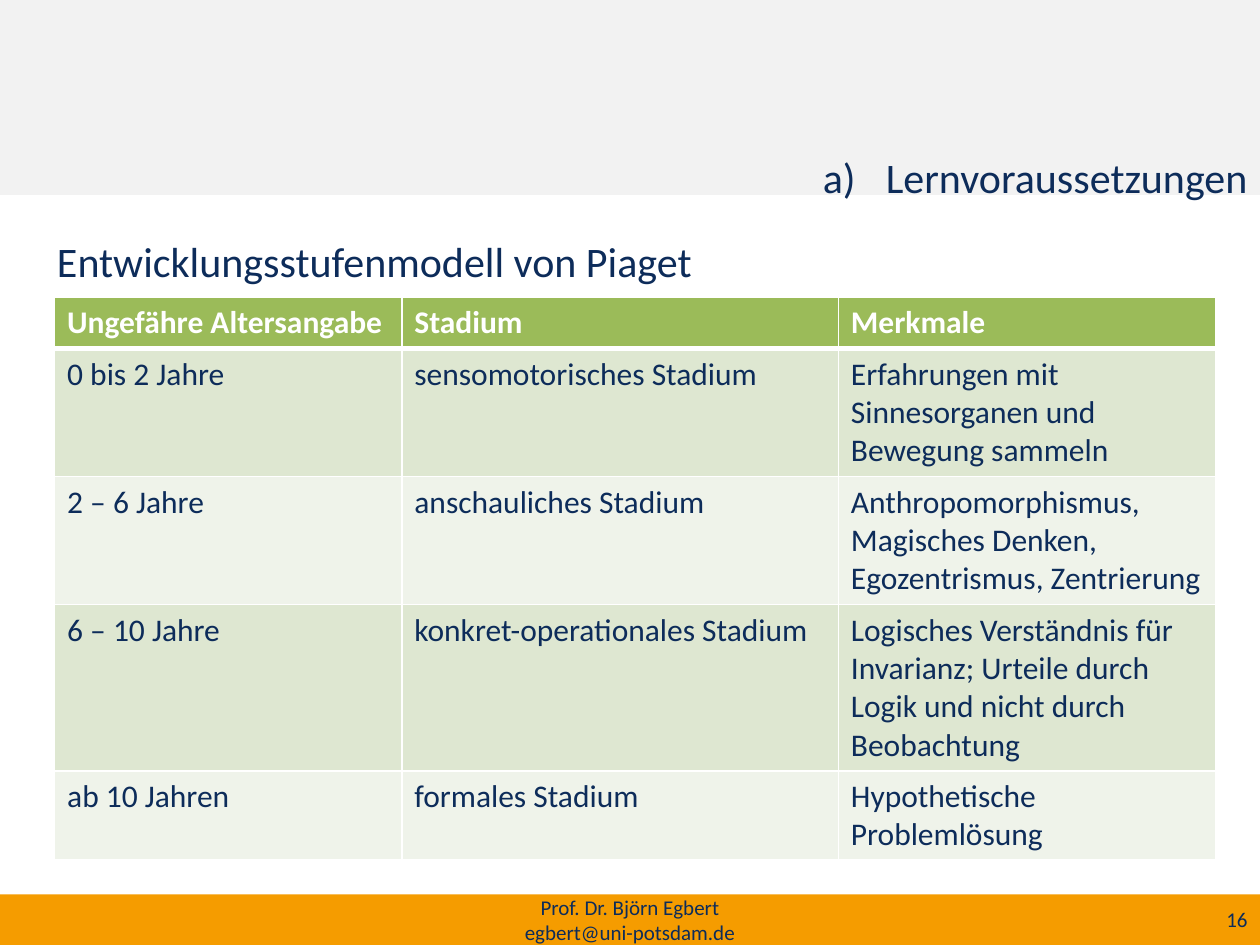
from lxml import etree
from pptx import Presentation
from pptx.enum.shapes import MSO_SHAPE as SHAPE
from pptx.enum.text import MSO_ANCHOR as ANCHOR, PP_ALIGN as ALIGN
from pptx.dml.color import RGBColor
from pptx.oxml.ns import qn
from pptx.util import Cm, Pt

COLORS = {
    "text": "0D2C5A",
    "white": "FFFFFF",
    "band": "F2F2F2",
    "footer": "F59C00",
    "header": "9BBB59",
    "odd": "DEE7D1",
    "even": "EFF3EA",
}
FONT = "Calibri"
COLUMN_WIDTHS = [7.0, 8.8, 7.6]
ROW_HEIGHTS = [1.03, 2.58, 2.58, 3.35, 1.8]
STAGES = [
    ["Ungefähre Altersangabe", "Stadium", "Merkmale"],
    ["0 bis 2 Jahre", "sensomotorisches Stadium",
     "Erfahrungen mit Sinnesorganen und Bewegung sammeln"],
    ["2 – 6 Jahre", "anschauliches Stadium",
     "Anthropomorphismus, Magisches Denken, Egozentrismus, Zentrierung"],
    ["6 – 10 Jahre", "konkret-operationales Stadium",
     "Logisches Verständnis für Invarianz; Urteile durch Logik und nicht durch Beobachtung"],
    ["ab 10 Jahren", "formales Stadium", "Hypothetische Problemlösung"],
]


def rgb(name):
    return RGBColor.from_string(COLORS[name])


def format_runs(p, size, color="text", bold=False):
    for r in p.runs:
        r.font.name = FONT
        r.font.size = Pt(size)
        r.font.bold = bold
        r.font.color.rgb = rgb(color)


def add_band(slide, top, height, color):
    sp = slide.shapes.add_shape(SHAPE.RECTANGLE, 0, Cm(top), Cm(25.4), Cm(height))
    sp.shadow.inherit = False
    sp.fill.solid()
    sp.fill.fore_color.rgb = rgb(color)
    sp.line.fill.background()


def add_text(slide, text, left, top, width, height, size,
             align=ALIGN.LEFT, anchor=ANCHOR.TOP):
    sp = slide.shapes.add_textbox(Cm(left), Cm(top), Cm(width), Cm(height))
    tf = sp.text_frame
    tf.word_wrap = True
    tf.vertical_anchor = anchor
    if anchor == ANCHOR.MIDDLE:
        tf.margin_top = tf.margin_bottom = 0
    p = tf.paragraphs[0]
    p.text = text
    p.alignment = align
    format_runs(p, size)
    return p


def number_paragraph(p, scheme, indent):
    pPr = p._p.get_or_add_pPr()
    pPr.set("marL", str(Cm(indent)))
    pPr.set("indent", str(-Cm(indent)))
    etree.SubElement(pPr, qn("a:buFont"), typeface="+mj-lt")
    etree.SubElement(pPr, qn("a:buAutoNum"), type=scheme)


def set_borders(cell, bottom):
    tcPr = cell._tc.get_or_add_tcPr()
    for side, width in (("L", 1), ("R", 1), ("T", 1), ("B", bottom)):
        ln = etree.SubElement(tcPr, qn(f"a:ln{side}"), w=str(Pt(width)))
        fill = etree.SubElement(ln, qn("a:solidFill"))
        etree.SubElement(fill, qn("a:srgbClr"), val=COLORS["white"])


def add_stage_table(slide, left, top):
    frame = slide.shapes.add_table(
        len(STAGES), len(COLUMN_WIDTHS), Cm(left), Cm(top),
        Cm(sum(COLUMN_WIDTHS)), Cm(sum(ROW_HEIGHTS)))
    table = frame.table
    for column, width in zip(table.columns, COLUMN_WIDTHS):
        column.width = Cm(width)
    for i, (row, height, texts) in enumerate(zip(table.rows, ROW_HEIGHTS, STAGES)):
        row.height = Cm(height)
        is_header = i == 0
        fill = "header" if is_header else "odd" if i % 2 else "even"
        for cell, text in zip(row.cells, texts):
            set_borders(cell, 3 if i < 1 else 1)
            cell.fill.solid()
            cell.fill.fore_color.rgb = rgb(fill)
            p = cell.text_frame.paragraphs[0]
            p.text = text
            format_runs(p, 18, "white" if is_header else "text", is_header)


def main():
    prs = Presentation()
    prs.slide_width, prs.slide_height = Cm(25.4), Cm(19.05)
    slide = prs.slides.add_slide(prs.slide_layouts[6])
    add_band(slide, 0, 3.93, "band")
    add_band(slide, 18.03, 1.02, "footer")
    add_text(slide, "Entwicklungsstufenmodell von Piaget", 0.9, 4.62, 22.15, 1.3, 24)
    add_text(slide, "16", 19.3, 18.02, 6.1, 1.02, 12, ALIGN.RIGHT, ANCHOR.MIDDLE)
    add_text(slide, "Prof. Dr. Björn Egbert\negbert@uni-potsdam.de",
             8.4, 18.02, 8.6, 1.03, 12, ALIGN.CENTER, ANCHOR.MIDDLE)
    add_stage_table(slide, 1.1, 6)
    title = add_text(slide, "Lernvoraussetzungen", 3.5, 2.92, 21.9, 1.6, 24, ALIGN.RIGHT)
    number_paragraph(title, "alphaLcParenR", 1.27)
    prs.save("out.pptx")


if __name__ == "__main__":
    main()
